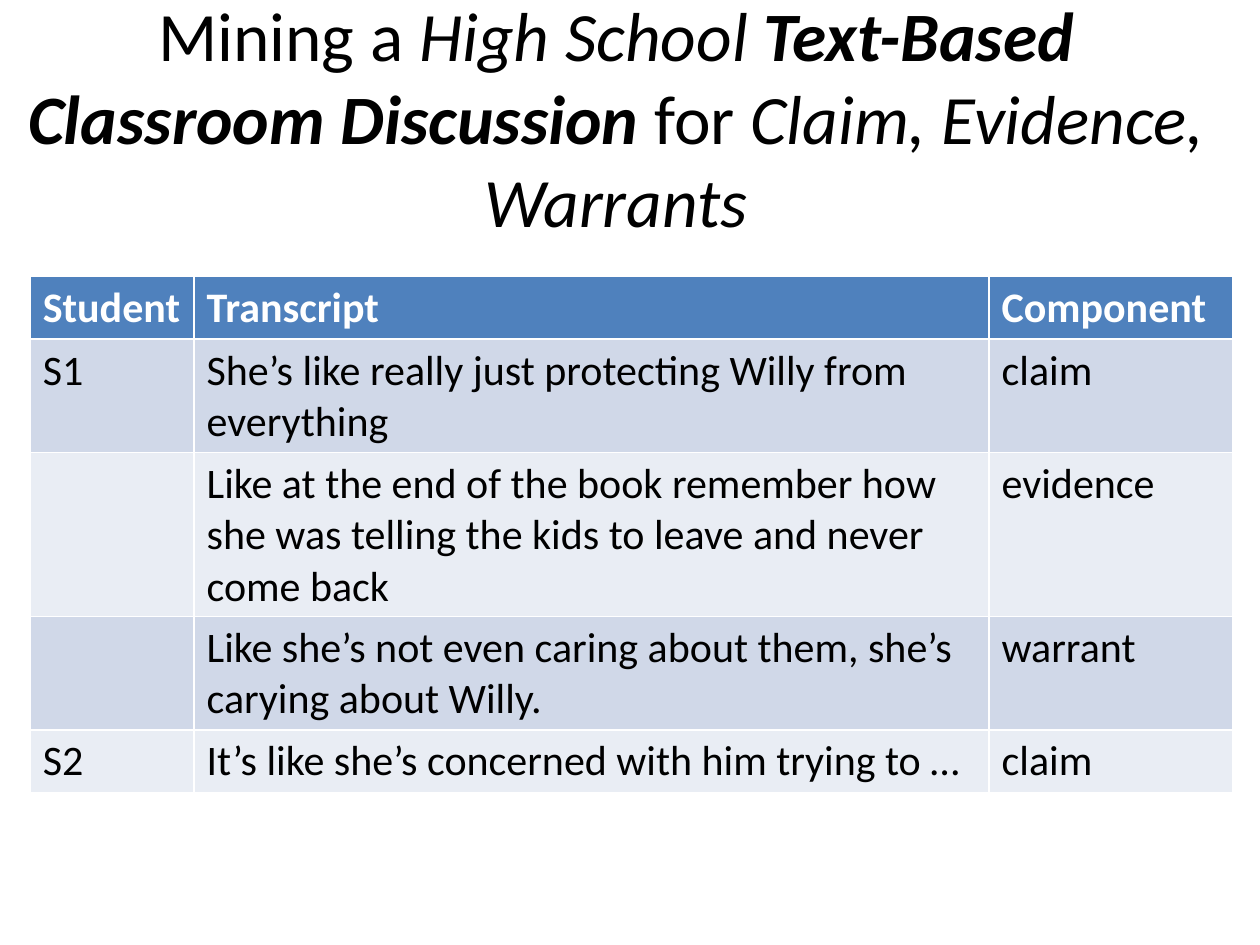
from pptx import Presentation
from pptx.dml.color import RGBColor as RGB
from pptx.enum.text import MSO_ANCHOR as Anchor, PP_ALIGN as Align
from pptx.util import Inches, Pt

TITLE = [
    ("Mining a ", False, False),
    ("High School ", False, True),
    ("Text-Based Classroom Discussion ", True, True),
    ("for ", False, False),
    ("Claim, Evidence, Warrants", False, True),
]
ROWS = [
    ("Student", "Transcript", "Component"),
    ("S1", "She’s like really just protecting Willy from everything", "claim"),
    ("", "Like at the end of the book remember how she was telling the kids "
         "to leave and never come back", "evidence"),
    ("", "Like she’s not even caring about them, she’s carying about Willy.", "warrant"),
    ("S2", "It’s like she’s concerned with him trying to …", "claim"),
]
WIDTHS = [1.3, 6.31, 1.93]
HEIGHTS = [0.41, 0.47, 0.41, 0.41, 0.41]
THEME = {
    "font": "Calibri",
    "title": 39.6,
    "body": 24,
    "ink": "000000",
    "light": "FFFFFF",
    "head": "4F81BD",
    "bands": ("E9EDF4", "D0D8E8"),
}


def style(font, size, color, bold=None):
    font.name = THEME["font"]
    font.size = Pt(size)
    font.color.rgb = RGB.from_string(color)
    font.bold = bold


def add_title(slide):
    box = slide.shapes.add_textbox(Inches(0), Inches(0.3), Inches(9.78), Inches(1.25))
    frame = box.text_frame
    frame.word_wrap = True
    frame.vertical_anchor = Anchor.MIDDLE
    para = frame.paragraphs[0]
    para.alignment = Align.CENTER
    style(para.font, THEME["title"], THEME["ink"])
    for text, bold, italic in TITLE:
        run = para.add_run()
        run.text = text
        style(run.font, THEME["title"], THEME["ink"], bold)
        run.font.italic = italic


def add_grid(slide):
    table = slide.shapes.add_table(
        len(ROWS), len(WIDTHS), Inches(0.24), Inches(2.19),
        Inches(sum(WIDTHS)), Inches(sum(HEIGHTS))).table
    for col, width in zip(table.columns, WIDTHS):
        col.width = Inches(width)
    for row, height in zip(table.rows, HEIGHTS):
        row.height = Inches(height)
    for r, row in enumerate(ROWS):
        head = r == 0
        for c, text in enumerate(row):
            cell = table.cell(r, c)
            cell.fill.solid()
            fill = THEME["head"] if head else THEME["bands"][r % 2]
            cell.fill.fore_color.rgb = RGB.from_string(fill)
            if text:
                cell.text = text
            ink = THEME["light"] if head else THEME["ink"]
            style(cell.text_frame.paragraphs[0].font, THEME["body"], ink, head)


def main():
    deck = Presentation()
    deck.slide_width, deck.slide_height = Inches(10), Inches(7.5)
    slide = deck.slides.add_slide(deck.slide_layouts[6])
    add_title(slide)
    add_grid(slide)
    deck.save("out.pptx")


if __name__ == "__main__":
    main()
